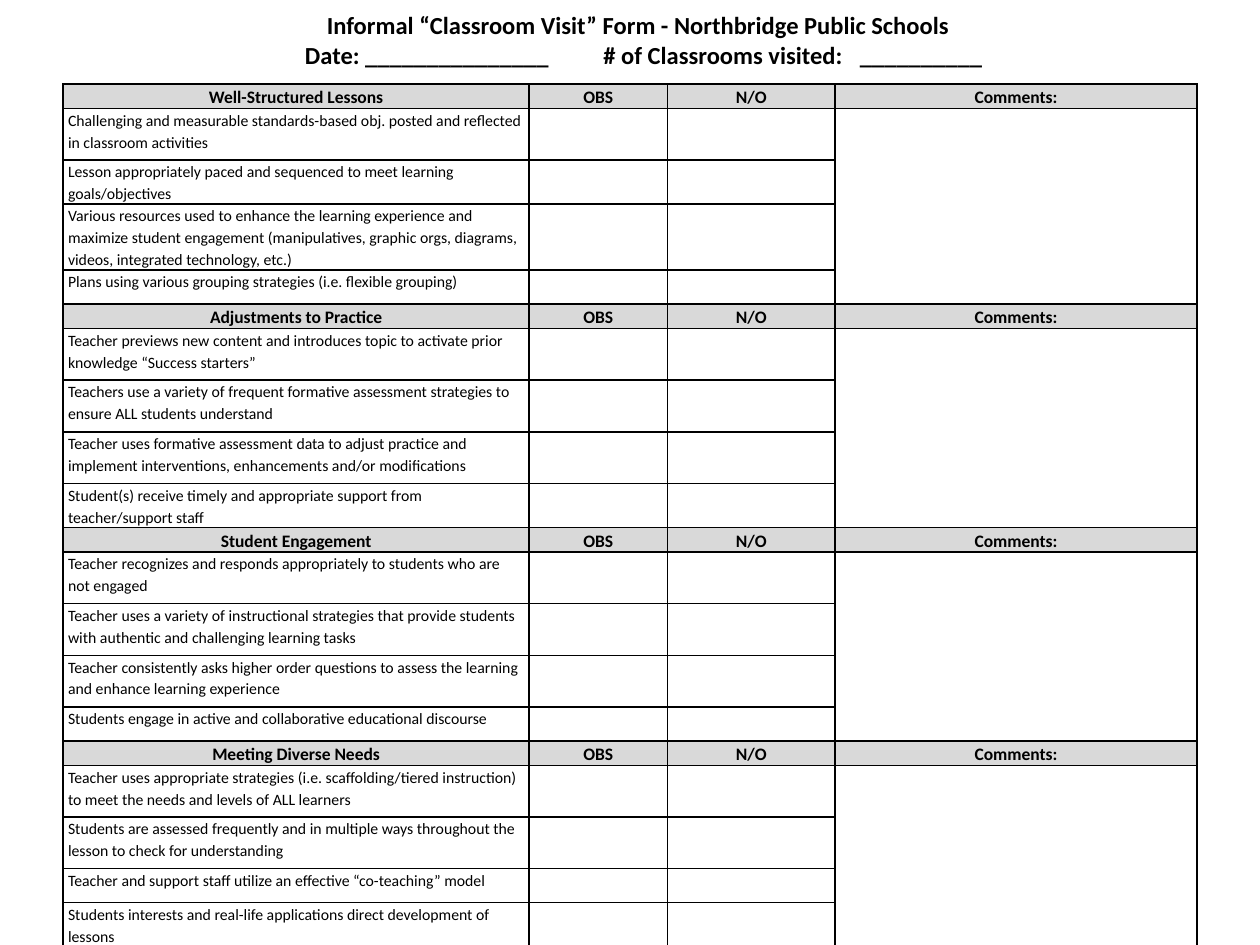
import dataclasses

import lxml.etree
import pptx
import pptx.dml.color
import pptx.enum.text
import pptx.oxml.ns
import pptx.util


@dataclasses.dataclass(frozen=True)
class Theme:
    """Hold the form's colours, font and sizes."""
    font: str = "Calibri"
    ink: str = "000000"
    header_fill: str = "D9D9D9"
    title_size: float = 14
    header_size: float = 10
    item_size: float = 9
    border_width: float = 1
    line_spacing: float = 1.15


THEME = Theme()
SLIDE_WIDTH, SLIDE_HEIGHT = 10, 7.5
COLUMN_SHARES = (0.411, 0.122, 0.148, 0.319)
HEADER_HEIGHT, ONE_LINE, TWO_LINES, THREE_LINES = 0.16, 0.27, 0.41, 0.52
HEADER_LABELS = ("OBS", "N/O", "Comments:")
SECTIONS = (
    ("Well-Structured Lessons", (
        ("Challenging and measurable standards-based obj. posted and reflected in classroom activities", TWO_LINES),
        ("Lesson appropriately paced and sequenced to meet learning goals/objectives", ONE_LINE),
        ("Various resources used to enhance the learning experience and maximize student engagement "
         "(manipulatives, graphic orgs, diagrams, videos, integrated technology, etc.)", THREE_LINES),
        ("Plans using various grouping strategies (i.e. flexible grouping)", ONE_LINE))),
    ("Adjustments to Practice", (
        ("Teacher previews new content and introduces topic to activate prior knowledge “Success starters”", TWO_LINES),
        ("Teachers use a variety of frequent formative assessment strategies to ensure ALL students understand",
         TWO_LINES),
        ("Teacher uses formative assessment data to adjust practice and implement interventions, "
         "enhancements and/or modifications", TWO_LINES),
        ("Student(s) receive timely and appropriate support from teacher/support staff", ONE_LINE))),
    ("Student Engagement", (
        ("Teacher recognizes and responds appropriately to students who are not engaged", TWO_LINES),
        ("Teacher uses a variety of instructional strategies that provide students with authentic "
         "and challenging learning tasks", TWO_LINES),
        ("Teacher consistently asks higher order questions to assess the learning and enhance learning experience",
         TWO_LINES),
        ("Students engage in active and collaborative educational discourse", ONE_LINE))),
    ("Meeting Diverse Needs", (
        ("Teacher uses appropriate strategies (i.e. scaffolding/tiered instruction) to meet the needs "
         "and levels of ALL learners", TWO_LINES),
        ("Students are assessed frequently and in multiple ways throughout the lesson to check for understanding",
         TWO_LINES),
        ("Teacher and support staff utilize an effective “co-teaching” model", ONE_LINE),
        ("Students interests and real-life applications direct development of lessons", ONE_LINE))),
)


def add_run(paragraph, text, size, bold):
    """Add one styled run to a paragraph."""
    run = paragraph.add_run()
    run.text = text
    run.font.name = THEME.font
    run.font.size = pptx.util.Pt(size)
    run.font.bold = bold
    run.font.color.rgb = pptx.dml.color.RGBColor.from_string(THEME.ink)


def add_element(parent, tag, **attributes):
    """Append a DrawingML element to its parent."""
    return lxml.etree.SubElement(parent, pptx.oxml.ns.qn(tag), attributes)


def set_borders(cell):
    """Draw solid borders on all four sides of a cell."""
    properties = cell._tc.get_or_add_tcPr()
    width = str(pptx.util.Pt(THEME.border_width))
    for position, side in enumerate(("a:lnL", "a:lnR", "a:lnT", "a:lnB")):
        line = add_element(properties, side, w=width)
        add_element(add_element(line, "a:solidFill"), "a:srgbClr", val=THEME.ink)
        properties.insert(position, line)


def fill_cell(cell, text="", header=False):
    """Set a cell's margins, fill, borders and text."""
    cell.margin_left = cell.margin_right = pptx.util.Inches(0.04)
    cell.margin_top = cell.margin_bottom = 0
    if header:
        cell.fill.solid()
        cell.fill.fore_color.rgb = pptx.dml.color.RGBColor.from_string(THEME.header_fill)
    else:
        cell.fill.background()
    set_borders(cell)
    paragraph = cell.text_frame.paragraphs[0]
    paragraph.line_spacing = THEME.line_spacing
    size = THEME.header_size if header else THEME.item_size
    if header:
        paragraph.alignment = pptx.enum.text.PP_ALIGN.CENTER
    if text:
        add_run(paragraph, text, size, header)
    else:
        add_element(paragraph._p, "a:endParaRPr", sz=str(int(size * 100)))


def add_heading(slide, left, top, width, height):
    """Place the form title and its fill-in line in the given box."""
    shape = slide.shapes.add_textbox(*map(pptx.util.Inches, (left, top, width, height)))
    frame = shape.text_frame
    frame.word_wrap = True
    frame.auto_size = pptx.enum.text.MSO_AUTO_SIZE.SHAPE_TO_FIT_TEXT
    frame.vertical_anchor = pptx.enum.text.MSO_ANCHOR.MIDDLE
    title = frame.paragraphs[0]
    title.alignment = pptx.enum.text.PP_ALIGN.CENTER
    add_run(title, "Informal “Classroom Visit” Form - Northbridge Public Schools", THEME.title_size, True)
    blanks = frame.add_paragraph()
    blanks.alignment = pptx.enum.text.PP_ALIGN.LEFT
    stops = add_element(blanks._p.get_or_add_pPr(), "a:tabLst")
    for share in (0.221, 0.462, 0.669):
        add_element(stops, "a:tab", pos=str(pptx.util.Inches(share * width)), algn="l")
    add_run(blanks, "\tDate: _______________\t# of Classrooms visited:\t__________", THEME.title_size, True)


def add_checklist(slide, left, top, width):
    """Place the observation table, one block of rows for each section."""
    heights = [height for _, items in SECTIONS
               for height in (HEADER_HEIGHT, *(height for _, height in items))]
    box = map(pptx.util.Inches, (left, top, width, sum(heights)))
    table = slide.shapes.add_table(len(heights), len(COLUMN_SHARES), *box).table
    table.first_row = table.horz_banding = False
    for column, share in zip(table.columns, COLUMN_SHARES):
        column.width = pptx.util.Inches(share * width)
    for row, height in zip(table.rows, heights):
        row.height = pptx.util.Inches(height)
    first = 0
    for heading, items in SECTIONS:
        for column, label in enumerate((heading, *HEADER_LABELS)):
            fill_cell(table.cell(first, column), label, header=True)
        for row, (text, _) in enumerate(items, first + 1):
            for column in range(len(COLUMN_SHARES)):
                fill_cell(table.cell(row, column), "" if column else text)
        last = first + len(items)
        comments = len(COLUMN_SHARES) - 1
        table.cell(first + 1, comments).merge(table.cell(last, comments))
        first = last + 1


def main():
    """Build and save the classroom visit form."""
    presentation = pptx.Presentation()
    presentation.slide_width = pptx.util.Inches(SLIDE_WIDTH)
    presentation.slide_height = pptx.util.Inches(SLIDE_HEIGHT)
    slide = presentation.slides.add_slide(presentation.slide_layouts[6])
    add_checklist(slide, 0.05 * SLIDE_WIDTH, 0.089 * SLIDE_HEIGHT, 0.9 * SLIDE_WIDTH)
    add_heading(slide, 0.015 * SLIDE_WIDTH, 0.004 * SLIDE_HEIGHT, 0.983 * SLIDE_WIDTH, 0.076 * SLIDE_HEIGHT)
    presentation.save("out.pptx")


if __name__ == "__main__":
    main()
